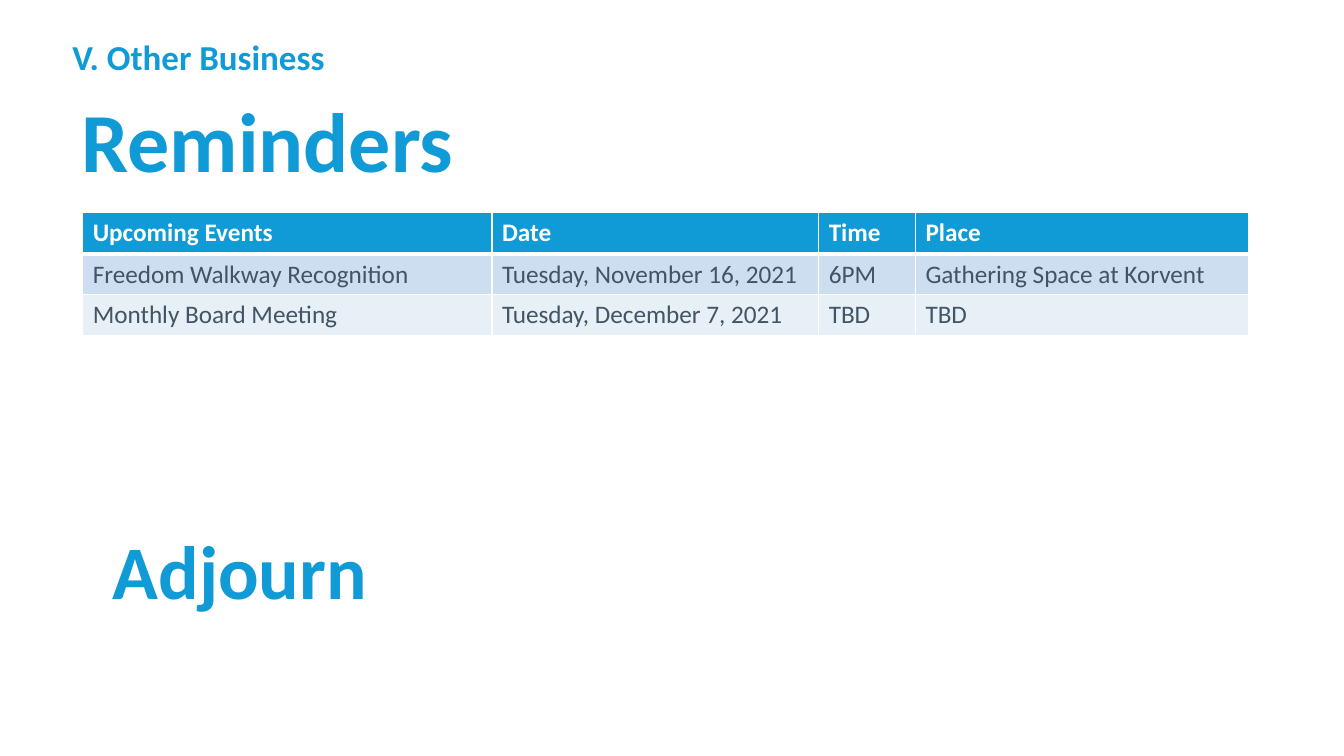
"""Build the reminders and adjournment slide with its table of upcoming events."""
from dataclasses import dataclass

from lxml.etree import SubElement
from pptx import Presentation
from pptx.dml.color import RGBColor
from pptx.enum.text import MSO_ANCHOR, PP_ALIGN
from pptx.oxml.ns import qn
from pptx.slide import Slide
from pptx.table import _Cell
from pptx.text.text import _Paragraph
from pptx.util import Inches, Pt

BLUE = RGBColor(0x10, 0x9A, 0xD6)
SLATE = RGBColor(0x43, 0x54, 0x64)
WHITE = RGBColor(0xFF, 0xFF, 0xFF)
BAND_DARK = RGBColor(0xCC, 0xDE, 0xF0)
BAND_LIGHT = RGBColor(0xE7, 0xEF, 0xF7)
FONT = "Calibri"


@dataclass(frozen=True)
class Heading:
    text: str
    left: float
    top: float
    width: float
    height: float
    size: float
    anchor: MSO_ANCHOR = MSO_ANCHOR.TOP
    align: PP_ALIGN = PP_ALIGN.LEFT
    line_spacing: float = 1.0


@dataclass(frozen=True)
class EventRow:
    texts: tuple[str, str, str, str]
    height: float
    fill: RGBColor
    color: RGBColor = SLATE
    bold: bool = False
    top_border: float = 1
    bottom_border: float = 1


HEADINGS = (
    Heading("Reminders", 0.71, 0.86, 9.95, 1.17, 60, MSO_ANCHOR.MIDDLE, line_spacing=0.9),
    Heading("V. Other Business", 0.62, 0.3, 11.76, 0.82, 25),
    Heading("Adjourn", 0.62, 5.25, 3.52, 1.24, 54, align=PP_ALIGN.CENTER, line_spacing=0.9),
)
COLUMN_WIDTHS = (4.06, 3.24, 0.96, 3.3)
EVENT_ROWS = (
    EventRow(("Upcoming Events", "Date", "Time", "Place"),
             0.41, BLUE, WHITE, bold=True, bottom_border=3),
    EventRow(("Freedom Walkway Recognition", "Tuesday, November 16, 2021", "6PM",
              "Gathering Space at Korvent"), 0.4, BAND_DARK, top_border=3),
    EventRow(("Monthly Board Meeting", "Tuesday, December 7, 2021", "TBD", "TBD"),
             0.4, BAND_LIGHT),
)


def style_paragraph(paragraph: _Paragraph, size: float, color: RGBColor, bold: bool) -> None:
    """Set the font of a whole paragraph."""
    font = paragraph.font
    font.name = FONT
    font.size = Pt(size)
    font.bold = bold
    font.color.rgb = color


def add_heading(page: Slide, heading: Heading) -> None:
    """Add one blue heading."""
    box = page.shapes.add_textbox(Inches(heading.left), Inches(heading.top),
                                  Inches(heading.width), Inches(heading.height))
    frame = box.text_frame
    frame.word_wrap = True
    frame.vertical_anchor = heading.anchor
    paragraph = frame.paragraphs[0]
    paragraph.text = heading.text
    paragraph.alignment = heading.align
    paragraph.line_spacing = heading.line_spacing
    style_paragraph(paragraph, heading.size, BLUE, True)


def add_borders(cell: _Cell, row: EventRow) -> None:
    """Draw white borders around a cell."""
    properties = cell._tc.get_or_add_tcPr()
    widths = {"a:lnL": 1, "a:lnR": 1, "a:lnT": row.top_border, "a:lnB": row.bottom_border}
    for tag, width in widths.items():
        line = SubElement(properties, qn(tag), w=str(Pt(width)))
        fill = SubElement(line, qn("a:solidFill"))
        SubElement(fill, qn("a:srgbClr"), val=str(WHITE))


def add_events_table(page: Slide) -> None:
    """Add the table of upcoming events."""
    table = page.shapes.add_table(
        len(EVENT_ROWS), len(COLUMN_WIDTHS), Inches(0.82), Inches(2.11),
        Inches(sum(COLUMN_WIDTHS)), Inches(sum(row.height for row in EVENT_ROWS))).table
    for column, width in zip(table.columns, COLUMN_WIDTHS):
        column.width = Inches(width)
    for table_row, row in zip(table.rows, EVENT_ROWS):
        table_row.height = Inches(row.height)
        for cell, text in zip(table_row.cells, row.texts):
            add_borders(cell, row)
            cell.fill.solid()
            cell.fill.fore_color.rgb = row.fill
            paragraph = cell.text_frame.paragraphs[0]
            paragraph.text = text
            style_paragraph(paragraph, 18, row.color, row.bold)


def main() -> None:
    """Build and save the deck."""
    deck = Presentation()
    deck.slide_width = Inches(13.33)
    deck.slide_height = Inches(7.5)
    page = deck.slides.add_slide(deck.slide_layouts[6])
    add_events_table(page)
    for heading in HEADINGS:
        add_heading(page, heading)
    deck.save("out.pptx")


if __name__ == "__main__":
    main()
